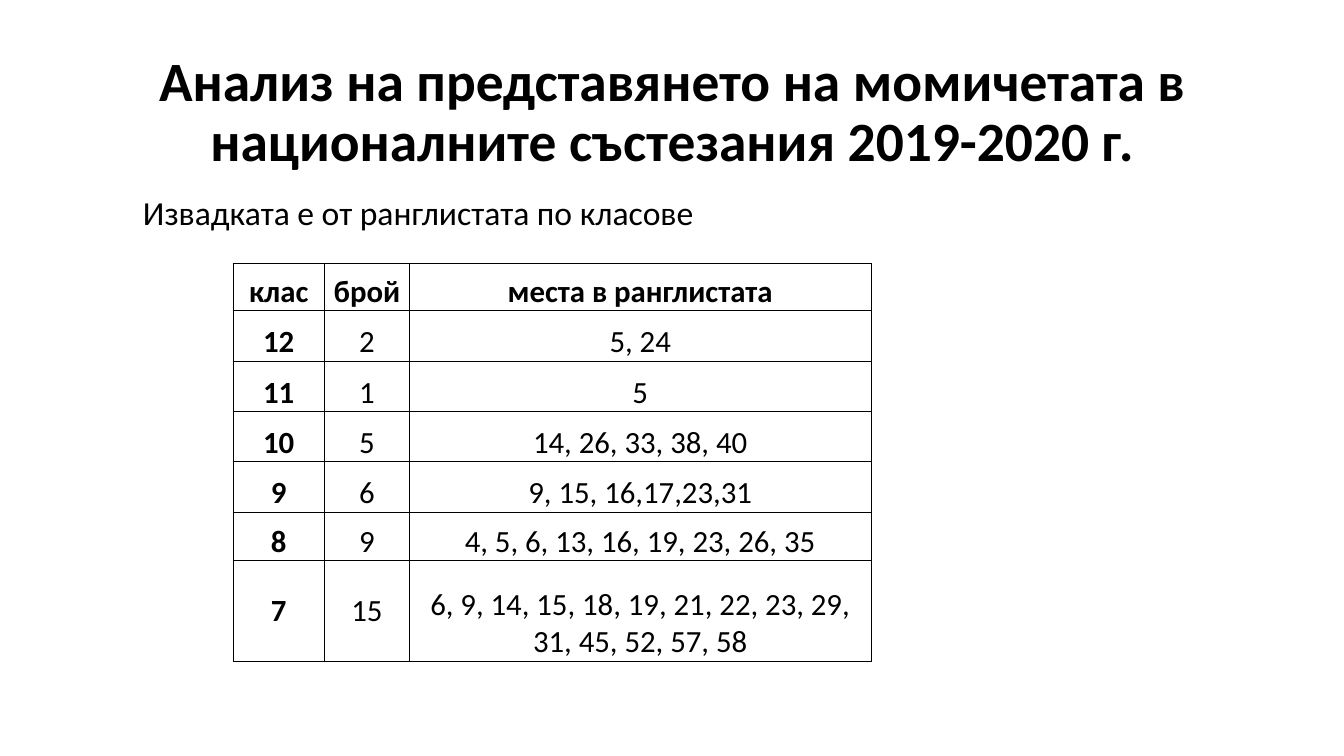
import pptx
import pptx.util
import pptx.dml.color
import pptx.enum.text
import pptx.oxml
import pptx.oxml.ns
from pptx.util import Inches

BLACK = pptx.dml.color.RGBColor(0x00, 0x00, 0x00)
FONT = "Calibri"
ALIGN = pptx.enum.text.PP_ALIGN
ANCHOR = pptx.enum.text.MSO_ANCHOR

COLUMN_WIDTHS = [0.91, 0.84, 4.58]
ROW_HEIGHTS = [0.47, 0.5, 0.5, 0.5, 0.5, 0.48, 1]
RANKING = [
    ("клас", "брой", "места в ранглистата"),
    ("12", "2", "5, 24"),
    ("11", "1", "5"),
    ("10", "5", "14, 26, 33, 38, 40"),
    ("9", "6", "9, 15, 16,17,23,31"),
    ("8", "9", "4, 5, 6, 13, 16, 19, 23, 26, 35"),
    ("7", "15", "6, 9, 14, 15, 18, 19, 21, 22, 23, 29, 31, 45, 52, 57, 58"),
]


def add_run(p, text, size, bold=False):
    r = p.add_run()
    r.text = text
    r.font.name = FONT
    r.font.size = pptx.util.Pt(size)
    r.font.bold = bold
    r.font.color.rgb = BLACK


def add_text(slide, box, text, size, bold=False, align=ALIGN.LEFT,
             anchor=ANCHOR.TOP, spacing=1.0):
    tf = slide.shapes.add_textbox(*map(Inches, box)).text_frame
    tf.word_wrap = True
    tf.vertical_anchor = anchor
    p = tf.paragraphs[0]
    p.alignment = align
    p.line_spacing = spacing
    add_run(p, text, size, bold)


def add_borders(cell, width=0.5):
    tc_pr = cell._tc.get_or_add_tcPr()
    for i, side in enumerate(("lnL", "lnR", "lnT", "lnB")):
        tc_pr.insert(i, pptx.oxml.parse_xml(
            f'<a:{side} {pptx.oxml.ns.nsdecls("a")} w="{pptx.util.Pt(width)}">'
            f'<a:solidFill><a:srgbClr val="{BLACK}"/></a:solidFill></a:{side}>'))


def fill_cell(cell, text, bold, anchor):
    cell.fill.background()
    cell.margin_left = cell.margin_right = cell.margin_top = Inches(0.01)
    cell.margin_bottom = 0
    cell.vertical_anchor = anchor
    p = cell.text_frame.paragraphs[0]
    p.alignment = ALIGN.CENTER
    add_run(p, text, 22, bold)
    add_borders(cell)


def add_ranking_table(slide, left, top):
    table = slide.shapes.add_table(
        len(RANKING), len(COLUMN_WIDTHS), Inches(left), Inches(top),
        Inches(sum(COLUMN_WIDTHS)), Inches(sum(ROW_HEIGHTS))).table
    table.horz_banding = False
    for column, width in zip(table.columns, COLUMN_WIDTHS):
        column.width = Inches(width)
    for row, height in zip(table.rows, ROW_HEIGHTS):
        row.height = Inches(height)
    last_row = len(RANKING) - 1
    for i, values in enumerate(RANKING):
        for j, text in enumerate(values):
            # The short values of the tall last row sit in the middle
            anchor = ANCHOR.MIDDLE if i == last_row and j < 2 else ANCHOR.BOTTOM
            fill_cell(table.cell(i, j), text, i == 0 or j == 0, anchor)


def main():
    prs = pptx.Presentation()
    prs.slide_width = Inches(13.33)
    prs.slide_height = Inches(7.5)
    slide = prs.slides.add_slide(prs.slide_layouts[6])

    # Title and subtitle
    add_text(slide, (0.92, 0.4, 11.5, 1.45),
             "Анализ на представянето на момичетата в националните състезания 2019-2020 г.",
             39.6, True, ALIGN.CENTER, ANCHOR.MIDDLE, 0.9)
    add_text(slide, (1.32, 1.85, 9.96, 0.5),
             "Извадката е от ранглистата по класове", 24)

    # Places by school grade
    add_ranking_table(slide, 2.31, 2.61)

    prs.save("out.pptx")


if __name__ == "__main__":
    main()
